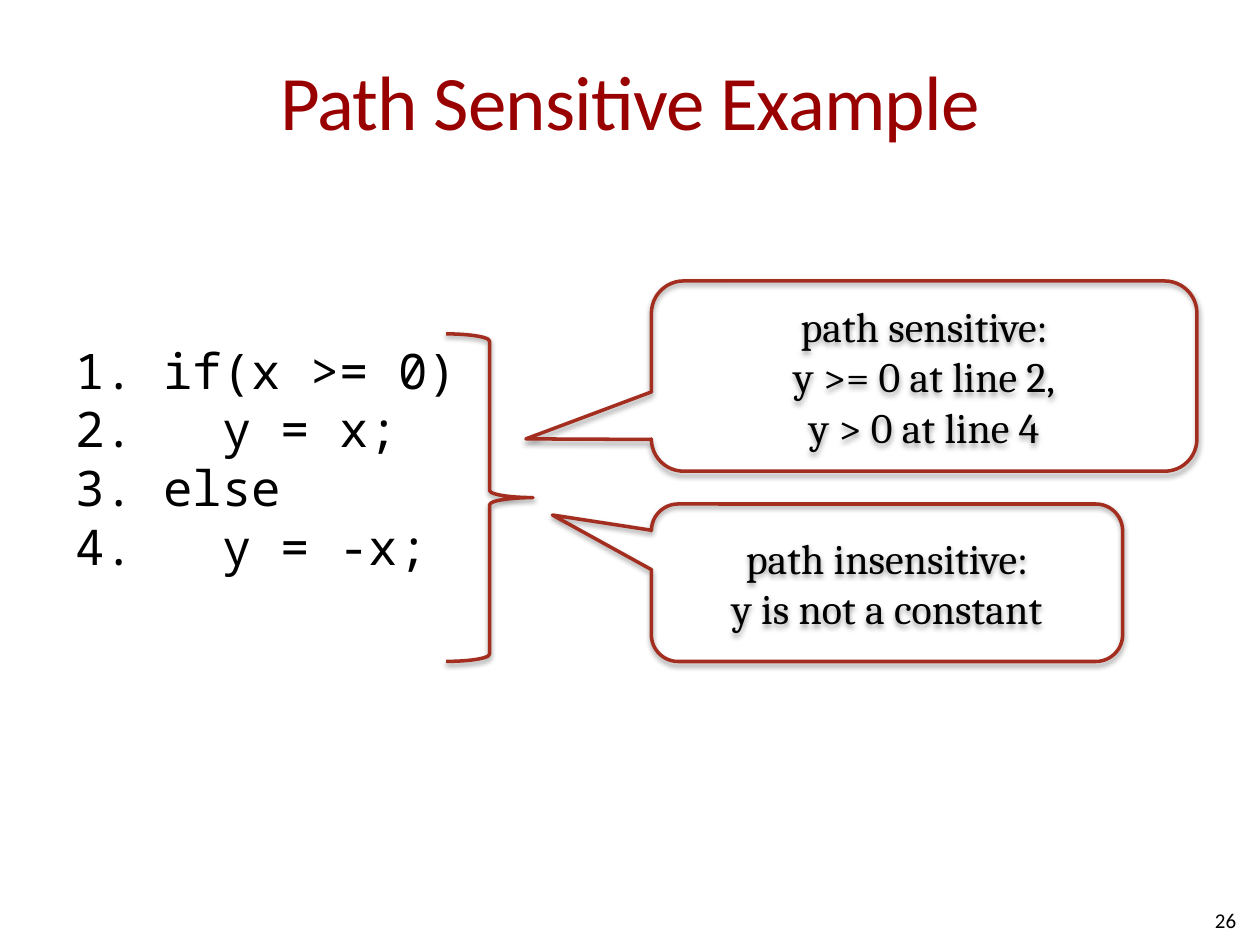
import pptx
import pptx.util
import pptx.dml.color
import pptx.enum.shapes
import pptx.enum.text
import pptx.oxml
import pptx.oxml.ns

Inches, Pt = pptx.util.Inches, pptx.util.Pt
RGBColor = pptx.dml.color.RGBColor
KIND = pptx.enum.shapes.MSO_SHAPE
ALIGN = pptx.enum.text.PP_ALIGN
ANCHOR = pptx.enum.text.MSO_ANCHOR

TITLE = "Path Sensitive Example"
CODE = "1. if(x >= 0)\n2.   y = x;\n3. else\n4.   y = -x;"
NOTES = [
    ("path sensitive:\ny >= 0 at line 2,\ny > 0 at line 4",
     (5.17, 2.23, 4.33, 1.51), (-0.73, 0.33, 0.17)),
    ("path insensitive:\ny is not a constant",
     (5.17, 4, 3.74, 1.25), (-0.71, -0.43, 0.17)),
]
BRACE = (3.54, 2.65, 0.69, 2.6)
NUMBER = "26"

RED = RGBColor(0x99, 0x00, 0x00)
RUST = RGBColor(0xA3, 0x2D, 0x1F)
BLACK = RGBColor(0, 0, 0)
SHADOW = (
    '<a:outerShdw %s blurRad="%d" dist="%d" dir="5400000" rotWithShape="0">'
    '<a:srgbClr val="000000"><a:alpha val="38000"/></a:srgbClr></a:outerShdw>'
    % (pptx.oxml.ns.nsdecls("a"), Pt(3.1), Pt(1.6))
)


def write(shape, text, font="Calibri", size=24, color=BLACK,
          align=ALIGN.CENTER, anchor=ANCHOR.MIDDLE, track=None):
    frame = shape.text_frame
    frame.word_wrap = True
    frame.vertical_anchor = anchor
    para = frame.paragraphs[0]
    para.text = text.replace("\n", "\v")
    para.alignment = align
    for run in para.runs:
        run.font.name = font
        run.font.size = Pt(size)
        run.font.color.rgb = color
        if track is not None:
            run.font._element.set("spc", str(int(track * 100)))


def place(shape, box):
    shape.left, shape.top, shape.width, shape.height = map(Inches, box)


def draw(slide, kind, box, adjust=()):
    shape = slide.shapes.add_shape(kind, *map(Inches, box))
    for i, value in enumerate(adjust):
        shape.adjustments[i] = value
    shape.fill.background()
    shape.line.color.rgb = RUST
    shape.line.width = Pt(2)
    shape.shadow.inherit = False
    effects = shape._element.spPr.find(pptx.oxml.ns.qn("a:effectLst"))
    effects.append(pptx.oxml.parse_xml(SHADOW))
    return shape


def main():
    deck = pptx.Presentation()
    deck.slide_width, deck.slide_height = Inches(10), Inches(7.5)
    slide = deck.slides.add_slide(deck.slide_layouts[5])

    title = slide.shapes.title
    place(title, (0.5, 0.17, 9, 1.25))
    title.text_frame.margin_left = title.text_frame.margin_right = 0
    write(title, TITLE, size=44, color=RED, track=-0.5)

    code = slide.shapes.add_textbox(*map(Inches, (0.5, 2.65, 3.74, 3.95)))
    write(code, CODE, font="Noto Sans Mono", size=28,
          align=ALIGN.LEFT, anchor=ANCHOR.TOP)

    for text, box, adjust in NOTES:
        note = draw(slide, KIND.ROUNDED_RECTANGULAR_CALLOUT, box, adjust)
        write(note, text, font="Cambria")
    draw(slide, KIND.RIGHT_BRACE, BRACE)

    number = slide.shapes.add_textbox(*map(Inches, (7.58, 7.1, 2.33, 0.4)))
    write(number, NUMBER, size=12, align=ALIGN.RIGHT)

    deck.save("out.pptx")


if __name__ == "__main__":
    main()
